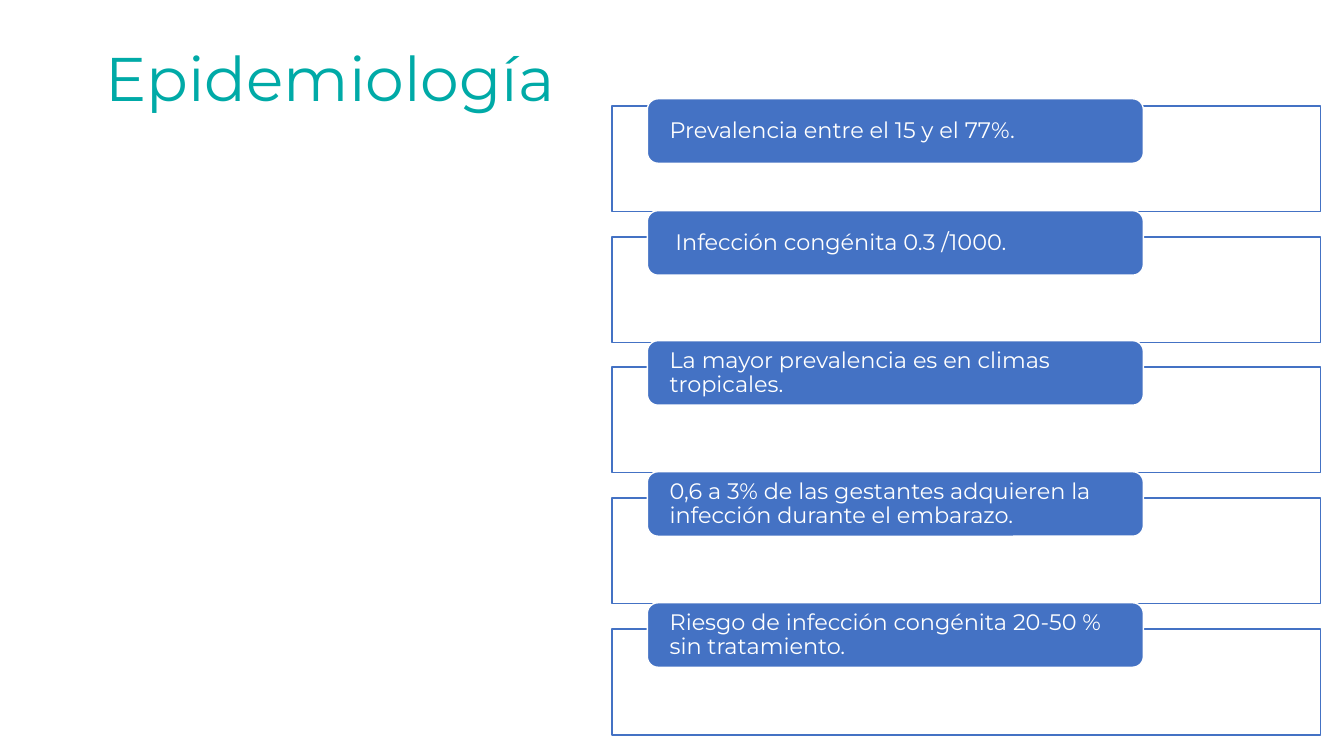
from lxml.etree import SubElement
from pptx import Presentation
from pptx.dml.color import RGBColor
from pptx.enum.shapes import MSO_SHAPE as SHAPE
from pptx.enum.text import MSO_ANCHOR as ANCHOR, PP_ALIGN as ALIGN
from pptx.oxml.ns import qn
from pptx.util import Pt

EMU_PER_PX = 9144  # 100 px to the inch
FONT = "Montserrat"
TEAL, BLUE, WHITE = "00AAA7", "4472C4", "FFFFFF"

FACTS = [
    "Prevalencia entre el 15 y el 77%.",
    " Infección congénita 0.3 /1000.",
    "La mayor prevalencia es en climas tropicales.",
    "0,6 a 3% de las gestantes adquieren la infección durante el embarazo.",
    "Riesgo de infección congénita 20-50 % sin tratamiento.",
]
FRAME_TOP, FRAME_PITCH = 105, 129.75
TAB_RISE, FIRST_TAB_RISE = 26, 7


def px(length):
    return round(length) * EMU_PER_PX


def color(hex_string):
    return RGBColor.from_string(hex_string)


def write_text(shape, text, size, hex_color, align):
    frame = shape.text_frame
    frame.text = text
    frame.word_wrap = True
    frame.vertical_anchor = ANCHOR.MIDDLE
    paragraph = frame.paragraphs[0]
    paragraph.alignment = align
    paragraph.line_spacing = 0.9
    font = paragraph.runs[0].font
    font.name, font.size = FONT, Pt(size)
    font.color.rgb = color(hex_color)


def add_title(slide, text):
    title = slide.shapes.title
    title.left, title.top, title.width, title.height = map(px, (55, 8, 545, 145))
    write_text(title, text, 44, TEAL, ALIGN.CENTER)


def add_box(slide, kind, box, fill, line):
    shape = slide.shapes.add_shape(kind, *map(px, box))
    shape.shadow.inherit = False
    shape.fill.solid()
    shape.fill.fore_color.rgb = color(fill)
    shape.line.color.rgb = color(line)
    shape.line.width = Pt(1)
    return shape


def add_frame(slide, top):
    frame = add_box(slide, SHAPE.RECTANGLE, (607, top, 703, 105), WHITE, BLUE)
    fill_color = frame.fill._xPr.find(qn("a:solidFill"))[0]
    SubElement(fill_color, qn("a:alpha"), val="90000")


def add_tab(slide, top, text):
    tab = add_box(slide, SHAPE.ROUNDED_RECTANGLE, (642, top, 492, 64), BLUE, WHITE)
    write_text(tab, text, 16, WHITE, ALIGN.LEFT)
    text_frame = tab.text_frame
    # A rounded rectangle already insets its text by about 3 px
    text_frame.margin_left = text_frame.margin_right = px(19)
    text_frame.margin_top = text_frame.margin_bottom = 0


def main():
    presentation = Presentation()
    presentation.slide_width, presentation.slide_height = px(1333), px(750)
    slide = presentation.slides.add_slide(presentation.slide_layouts[5])
    add_title(slide, "Epidemiología")
    for index, fact in enumerate(FACTS):
        top = FRAME_TOP + index * FRAME_PITCH
        add_frame(slide, top)
        add_tab(slide, top - (TAB_RISE if index else FIRST_TAB_RISE), fact)
    presentation.save("out.pptx")


if __name__ == "__main__":
    main()
